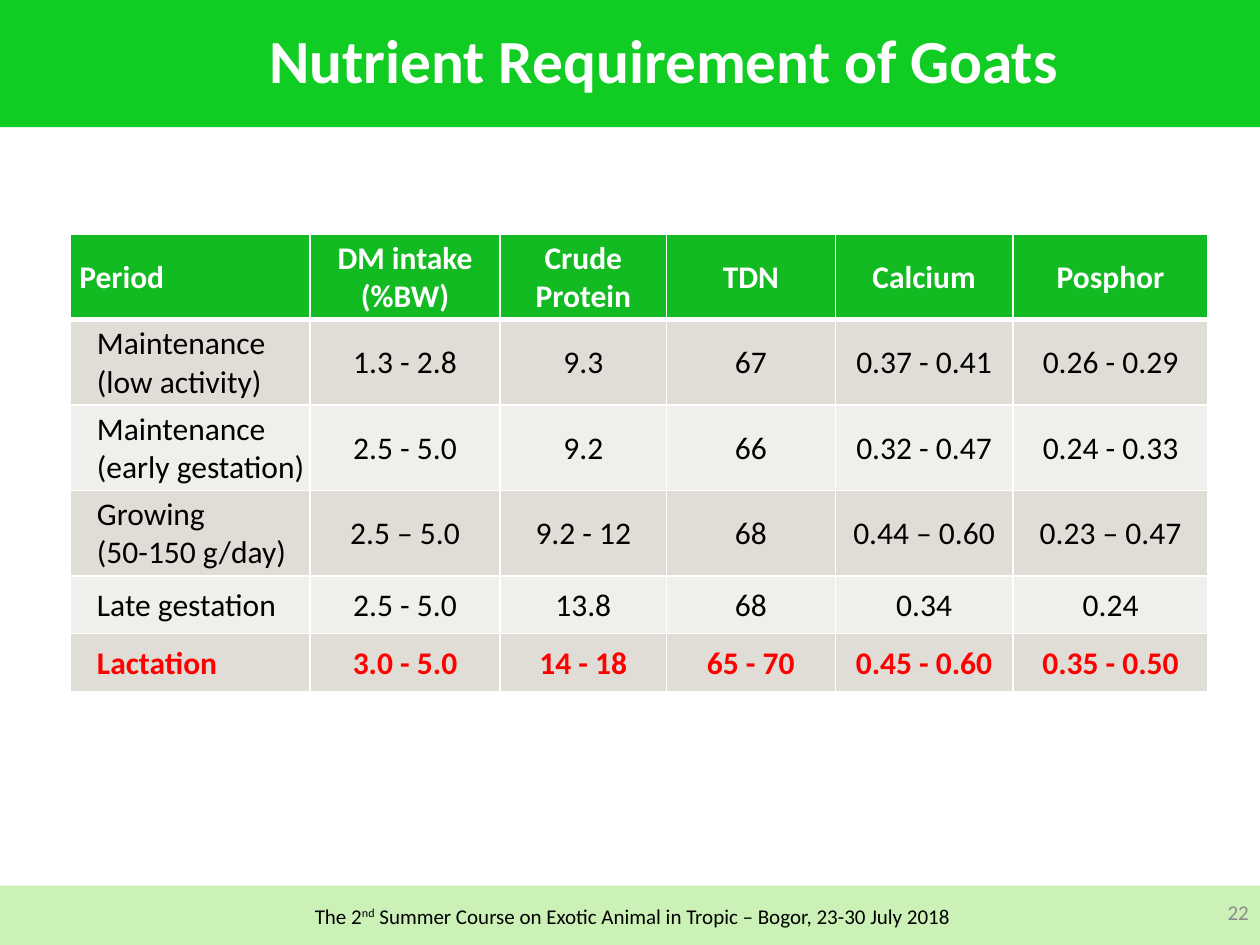
from lxml import etree
from pptx import Presentation
from pptx.dml.color import RGBColor
from pptx.enum.shapes import MSO_SHAPE
from pptx.enum.text import MSO_ANCHOR, PP_ALIGN
from pptx.oxml.ns import qn
from pptx.util import Inches, Pt

RECTANGLE = MSO_SHAPE.RECTANGLE
MIDDLE = MSO_ANCHOR.MIDDLE
LEFT, CENTER, RIGHT = PP_ALIGN.LEFT, PP_ALIGN.CENTER, PP_ALIGN.RIGHT

WHITE = RGBColor(0xFF, 0xFF, 0xFF)
BLACK = RGBColor(0x00, 0x00, 0x00)
RED = RGBColor(0xFF, 0x00, 0x00)
GRAY = RGBColor(0x8C, 0x8C, 0x8C)
TITLE_GREEN = RGBColor(0x11, 0xCD, 0x23)
HEADER_GREEN = RGBColor(0x12, 0xBB, 0x21)
FOOTER_GREEN = RGBColor(0xCB, 0xF1, 0xB7)
DARK_BAND = RGBColor(0xE0, 0xDD, 0xD6)
LIGHT_BAND = RGBColor(0xF0, 0xEF, 0xEB)

COLUMN_WIDTHS = [19, 15.1, 13.2, 13.4, 14.1, 15.5]
ROW_HEIGHTS = [6.78] * 4 + [4.58] * 2
REQUIREMENTS = [
    ["Period", "DM intake (%BW)", "Crude Protein", "TDN", "Calcium", "Posphor"],
    ["Maintenance (low activity)", "1.3 - 2.8", "9.3", "67", "0.37 - 0.41", "0.26 - 0.29"],
    ["Maintenance (early gestation)", "2.5 - 5.0", "9.2", "66", "0.32 - 0.47", "0.24 - 0.33"],
    ["Growing\n(50-150 g/day)", "2.5 – 5.0", "9.2 - 12", "68", "0.44 – 0.60", "0.23 – 0.47"],
    ["Late gestation", "2.5 - 5.0", "13.8", "68", "0.34", "0.24"],
    ["Lactation", "3.0 - 5.0", "14 - 18", "65 - 70", "0.45 - 0.60", "0.35 - 0.50"],
]


class SlideBuilder:
    font = "Calibri"
    columns, rows = 100, 75

    def __init__(self, deck):
        self.deck = deck
        self.slide = deck.slides.add_slide(deck.slide_layouts[6])

    def across(self, columns):
        return round(self.deck.slide_width * columns / self.columns)

    def down(self, rows):
        return round(self.deck.slide_height * rows / self.rows)

    def place(self, left, top, width, height):
        return self.across(left), self.down(top), self.across(width), self.down(height)

    def fill_text(self, frame, parts, size, color, bold=False, align=CENTER):
        frame.word_wrap = True
        frame.vertical_anchor = MIDDLE
        para = frame.paragraphs[0]
        for text in parts:
            para.add_run().text = text
        self.style(frame, size, color, bold, align)

    def style(self, frame, size, color, bold, align):
        for para in frame.paragraphs:
            para.alignment = align
            for span in para.runs:
                span.font.name = self.font
                span.font.size = Pt(size)
                span.font.bold = bold
                span.font.color.rgb = color

    def band(self, area, fill, parts, size, color, bold=False, indent=0):
        box = self.slide.shapes.add_shape(RECTANGLE, *self.place(*area))
        box.shadow.inherit = False
        box.fill.solid()
        box.fill.fore_color.rgb = fill
        box.line.fill.background()
        frame = box.text_frame
        frame.margin_left = self.across(1 + indent)
        self.fill_text(frame, parts, size, color, bold)
        frame.paragraphs[0].line_spacing = 0.9
        return frame.paragraphs[0]

    def label(self, area, text, size, color, align):
        box = self.slide.shapes.add_textbox(*self.place(*area))
        self.fill_text(box.text_frame, [text], size, color, align=align)

    def borders(self, cell, top, bottom):
        properties = cell._tc.get_or_add_tcPr()
        sides = {"a:lnL": 1, "a:lnR": 1, "a:lnT": top, "a:lnB": bottom}
        for position, (side, width) in enumerate(sides.items()):
            line = etree.Element(qn(side), w=str(int(Pt(width))))
            fill = etree.SubElement(line, qn("a:solidFill"))
            etree.SubElement(fill, qn("a:srgbClr"), val=str(WHITE))
            properties.insert(position, line)

    def table(self, left, top, widths, heights, values):
        area = self.place(left, top, sum(widths), sum(heights))
        table = self.slide.shapes.add_table(len(heights), len(widths), *area).table
        for column, width in zip(table.columns, widths):
            column.width = self.across(width)
        for row, height in zip(table.rows, heights):
            row.height = self.down(height)
        last = len(values) - 1
        for r, row in enumerate(values):
            fill = HEADER_GREEN if r == 0 else DARK_BAND if r % 2 else LIGHT_BAND
            color = {0: WHITE, last: RED}.get(r, BLACK)
            for c, text in enumerate(row):
                cell = table.cell(r, c)
                cell.text_frame.text = text
                cell.vertical_anchor = MIDDLE
                cell.margin_left = cell.margin_right = cell.margin_top = Inches(0.01)
                cell.margin_bottom = 0
                if c == 0:
                    cell.margin_left = Inches(0.21 if r else 0.07)
                cell.fill.solid()
                cell.fill.fore_color.rgb = fill
                self.borders(cell, 3 if r == 1 else 1, 3 if r == 0 else 1)
                self.style(cell.text_frame, 18, color, r in (0, last), CENTER if c else LEFT)


def main():
    deck = Presentation()
    deck.slide_width, deck.slide_height = Inches(10), Inches(7.5)
    page = SlideBuilder(deck)
    footer = page.band(
        (-0.1, 70.3, 100.1, 5), FOOTER_GREEN,
        ["The 2", "nd", " Summer Course on Exotic Animal in Tropic – Bogor, 23-30 July 2018"],
        12, BLACK, indent=0.5)
    footer.runs[1].font._element.set("baseline", "30000")
    page.band((0, 0, 100, 10.1), TITLE_GREEN, ["Nutrient Requirement of Goats"],
              35, WHITE, bold=True, indent=5.4)
    page.table(5.6, 18.6, COLUMN_WIDTHS, ROW_HEIGHTS, REQUIREMENTS)
    page.label((77.6, 70.4, 22.5, 4), "22", 12, GRAY, RIGHT)
    deck.save("out.pptx")


if __name__ == "__main__":
    main()
